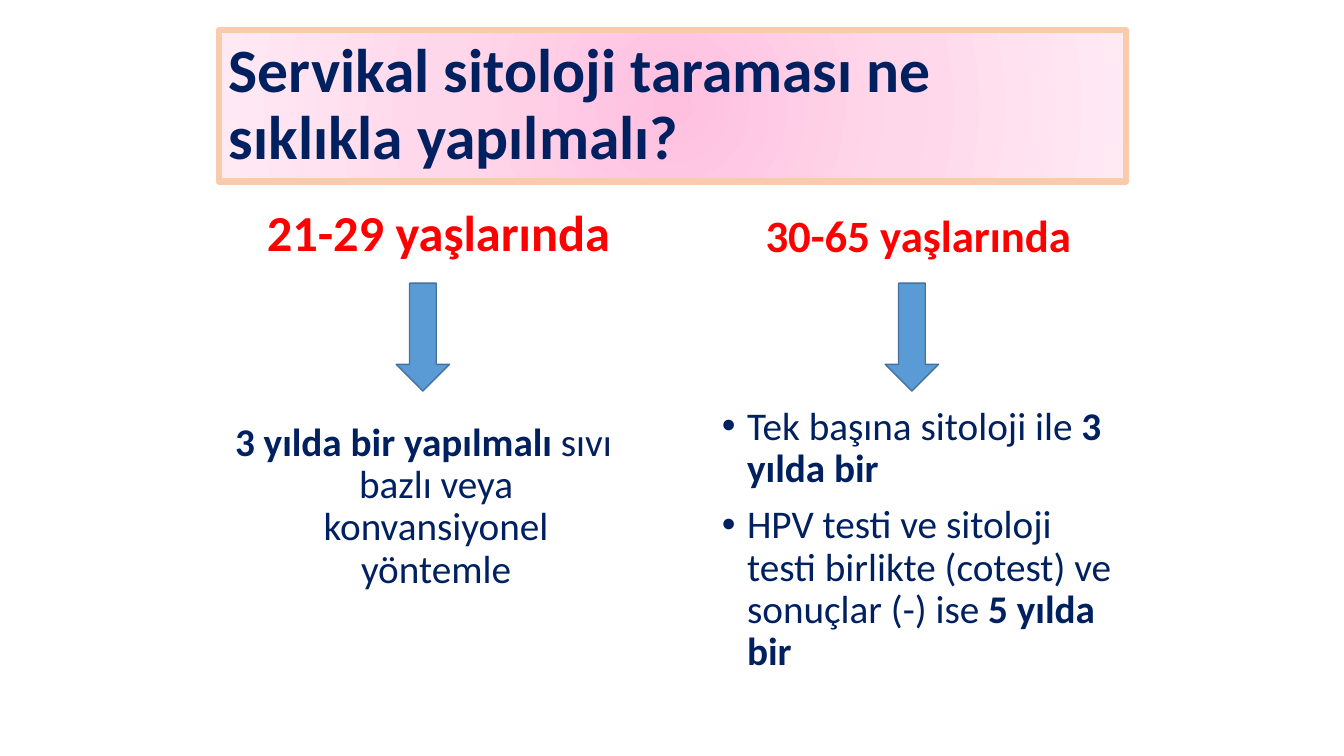
from pptx import Presentation
from pptx.dml.color import RGBColor
from pptx.enum.shapes import MSO_SHAPE as Shape
from pptx.enum.text import MSO_ANCHOR as Anchor, MSO_AUTO_SIZE as Fit, PP_ALIGN as Align
from pptx.oxml import parse_xml
from pptx.oxml.ns import nsdecls, qn
from pptx.util import Inches, Pt
from lxml import etree


def color(code):
    return RGBColor.from_string(code)


def write(box, area, paras, size, ink, align, anchor, mark=None):
    box.left, box.top, box.width, box.height = [Inches(v) for v in area]
    frame = box.text_frame
    frame.word_wrap = True
    frame.auto_size = Fit.NONE
    frame.vertical_anchor = anchor
    for i, parts in enumerate(paras):
        para = frame.paragraphs[0] if i == 0 else frame.add_paragraph()
        para.alignment = align
        para.line_spacing = 0.9
        para.space_before = Pt(10 if i else 0)
        para.space_after = Pt(0)
        props = para._p.get_or_add_pPr()
        hang = Inches(0.25) if area[1] > 3 else 0
        props.set("marL", str(hang))
        props.set("indent", str(-hang))
        if mark:
            etree.SubElement(props, qn("a:buFont")).set("typeface", "Arial")
            etree.SubElement(props, qn("a:buChar")).set("char", mark)
        else:
            etree.SubElement(props, qn("a:buNone"))
        for text, bold in parts:
            run = para.add_run()
            run.text = text
            run.font.name = "Calibri"
            run.font.size = Pt(size)
            run.font.bold = bold
            run.font.color.rgb = color(ink)


deck = Presentation()
deck.slide_width = Inches(13.33)
deck.slide_height = Inches(7.5)
slide = deck.slides.add_slide(deck.slide_layouts[4])
slots = {s.placeholder_format.idx: s for s in slide.placeholders}

title = slots[0]
write(title, (2.17, 0.3, 9, 1.5),
      [[("Servikal sitoloji taraması ne sıklıkla yapılmalı?", True)]],
      44, "002060", Align.LEFT, Anchor.MIDDLE)
title.line.color.rgb = color("F8CBAD")
title.line.width = Pt(4.5)
title.fill.gradient()
stops = "".join(
    f'<a:gs pos="{pos}000"><a:srgbClr val="{code}"/></a:gs>'
    for pos, code in [(0, "FFC0E0"), (50, "FFD7EA"), (100, "FFEAF4")])
glow = parse_xml(
    f'<a:gradFill {nsdecls("a")} rotWithShape="1"><a:gsLst>{stops}</a:gsLst>'
    '<a:path path="circle"><a:fillToRect l="50000" t="50000" r="50000" b="50000"/>'
    '</a:path></a:gradFill>')
props = title._element.spPr
props.replace(props.find(qn("a:gradFill")), glow)

for idx, left, text, size in [(1, 2.14, "21-29 yaşlarında", 36),
                              (3, 6.9, "30-65 yaşlarında", 32)]:
    write(slots[idx], (left, 1.95, 4.42, 0.7), [[(text, True)]],
          size, "FF0000", Align.CENTER, Anchor.BOTTOM)

young = [[("3 yılda bir yapılmalı ", True),
          ("sıvı bazlı veya konvansiyonel yöntemle", False)]]
older = [[("Tek başına sitoloji ile ", False), ("3 yılda bir", True)],
         [("HPV testi ve sitoloji testi birlikte (cotest) ve sonuçlar (-) ise ", False),
          ("5 yılda bir", True)]]
for idx, area, paras, align, mark in [
        (2, (2.21, 4.14, 3.98, 3.05), young, Align.CENTER, None),
        (4, (7.06, 3.98, 4.14, 3.12), older, Align.LEFT, "•")]:
    write(slots[idx], area, paras, 28, "002060", align, Anchor.TOP, mark)
    slots[idx].fill.solid()
    slots[idx].fill.fore_color.rgb = color("FFFFFF")

for left in (3.93, 8.78):
    arrow = slide.shapes.add_shape(Shape.DOWN_ARROW, Inches(left), Inches(2.81),
                                   Inches(0.53), Inches(1.07))
    arrow.shadow.inherit = False
    arrow.fill.solid()
    arrow.fill.fore_color.rgb = color("5B9BD5")
    arrow.line.color.rgb = color("43739E")
    arrow.line.width = Pt(1)

deck.save("out.pptx")
